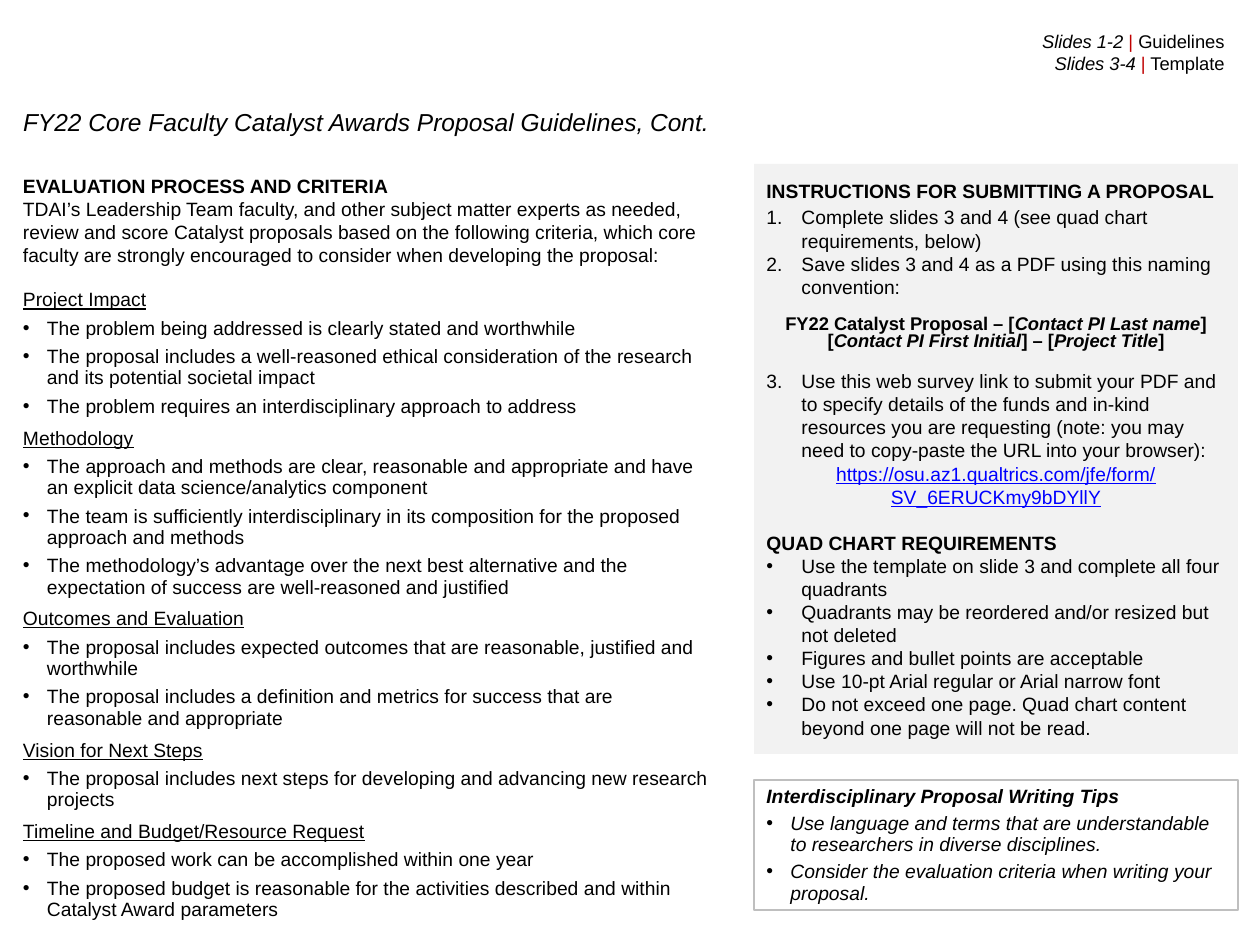
import pptx
import pptx.util
import pptx.dml.color
import pptx.enum.shapes
import pptx.enum.text
from lxml import etree
from pptx.oxml.ns import qn

# Content: (kind, text) or (kind, [(run, marks), ...]); marks: b, i, u, link, red
TITLE = "FY22 Core Faculty Catalyst Awards Proposal Guidelines, Cont."
TAGS = [
    ("tag", [("Slides 1-2 ", "i"), ("|", "red"), (" Guidelines", "")]),
    ("tag", [("Slides 3-4 ", "i"), ("|", "red"), (" Template", "")]),
]
INTRO = [
    ("head", "EVALUATION PROCESS AND CRITERIA"),
    ("intro", "TDAI’s Leadership Team faculty, and other subject matter experts as needed, "
              "review and score Catalyst proposals based on the following criteria, which core "
              "faculty are strongly encouraged to consider when developing the proposal:"),
]
CRITERIA = {
    "Project Impact": [
        "The problem being addressed is clearly stated and worthwhile",
        "The proposal includes a well-reasoned ethical consideration of the research "
        "and its potential societal impact",
        "The problem requires an interdisciplinary approach to address"],
    "Methodology": [
        "The approach and methods are clear, reasonable and appropriate and have "
        "an explicit data science/analytics component",
        "The team is sufficiently interdisciplinary in its composition for the proposed "
        "approach and methods",
        "The methodology’s advantage over the next best alternative and the "
        "expectation of success are well-reasoned and justified"],
    "Outcomes and Evaluation": [
        "The proposal includes expected outcomes that are reasonable, justified and worthwhile",
        "The proposal includes a definition and metrics for success that are reasonable "
        "and appropriate"],
    "Vision for Next Steps": [
        "The proposal includes next steps for developing and advancing new research projects"],
    "Timeline and Budget/Resource Request": [
        "The proposed work can be accomplished within one year",
        "The proposed budget is reasonable for the activities described and within "
        "Catalyst Award parameters"],
}
STEPS = [
    ("first", "INSTRUCTIONS FOR SUBMITTING A PROPOSAL"),
    ("step", "Complete slides 3 and 4 (see quad chart requirements, below)"),
    ("step", "Save slides 3 and 4 as a PDF using this naming convention:"),
    ("name", [("FY22 Catalyst Proposal – [", "b"), ("Contact PI Last name", "b i"),
              ("] [", "b"), ("Contact PI First Initial", "b i"), ("] – [", "b"),
              ("Project Title", "b i"), ("]", "b")]),
    ("step 3", "Use this web survey link to submit your PDF and to specify details of the funds "
               "and in-kind resources you are requesting (note: you may need to copy-paste "
               "the URL into your browser):"),
    ("url", "https://osu.az1.qualtrics.com/jfe/form/SV_6ERUCKmy9bDYllY"),
    ("quad", "QUAD CHART REQUIREMENTS"),
    ("rule", "Use the template on slide 3 and complete all four quadrants"),
    ("rule", "Quadrants may be reordered and/or resized but not deleted"),
    ("rule", "Figures and bullet points are acceptable"),
    ("rule", "Use 10-pt Arial regular or Arial narrow font"),
    ("rule", "Do not exceed one page. Quad chart content beyond one page will not be read."),
]
TIPS = [
    ("tip head", "Interdisciplinary Proposal Writing Tips"),
    ("tip", "Use language and terms that are understandable to researchers in diverse disciplines."),
    ("last tip", "Consider the evaluation criteria when writing your proposal."),
]

# Styles: spacing in pt, indent in px
COLORS = {"text": "000000", "red": "C00000", "link": "0000FF",
          "panel": "F2F2F2", "edge": "BFBFBF"}
FONT = "Arial"
STEP = dict(num=1, indent=35)
TIP = dict(bullet=True, indent=24, lead=12.4, marks="i")
KINDS = {
    "title": dict(size=14, marks="i", align="LEFT"),
    "tag": dict(size=10.5, align="RIGHT"),
    "head": dict(marks="b"),
    "intro": dict(after=11),
    "topic": dict(marks="u", lead=12.2, before=2, after=4),
    "point": dict(bullet=True, indent=24, lead=12.2, after=4),
    "first": dict(marks="b", after=2),
    "step": STEP,
    "step 3": {**STEP, "num": 3, "before": 10.2},
    "name": dict(size=10.5, align="CENTER", lead=10.2, before=10.2),
    "url": dict(marks="u link", align="CENTER"),
    "quad": dict(marks="b", before=13),
    "rule": dict(bullet=True, indent=35),
    "tip head": dict(marks="b i", lead=12.4, after=3),
    "tip": {**TIP, "after": 3},
    "last tip": TIP,
}
EMU = 914400 / 126


def px(n):
    return pptx.util.Emu(round(n * EMU))


def rgb(key):
    return pptx.dml.color.RGBColor.from_string(COLORS[key])


def style(para, kind, text):
    look = KINDS[kind]
    runs = [(text, look.get("marks", ""))] if isinstance(text, str) else text
    para.text = runs[0][0]
    for words, _ in runs[1:]:
        para.add_run().text = words
    para.space_before = pptx.util.Pt(look.get("before", 0))
    para.space_after = pptx.util.Pt(look.get("after", 0))
    para.alignment = getattr(pptx.enum.text.PP_ALIGN, look.get("align", "LEFT"))
    if "lead" in look:
        para.line_spacing = pptx.util.Pt(look["lead"])
    # Bullets and numbers
    if "indent" in look:
        props = para._p.get_or_add_pPr()
        props.set("marL", str(px(look["indent"])))
        props.set("indent", str(-px(look["indent"])))
        etree.SubElement(props, qn("a:buFont"), typeface=FONT)
        if "num" in look:
            etree.SubElement(props, qn("a:buAutoNum"), type="arabicPeriod",
                             startAt=str(look["num"]))
        else:
            etree.SubElement(props, qn("a:buChar"), char="•")
    for run, (_, marks) in zip(para.runs, runs):
        marks = marks.split()
        font = run.font
        font.name, font.size = FONT, pptx.util.Pt(look.get("size", 11))
        font.bold, font.italic, font.underline = "b" in marks, "i" in marks, "u" in marks
        font.color.rgb = rgb(next((m for m in marks if m in COLORS), "text"))


def write(shape, paras, anchor="TOP", **pads):
    frame = shape.text_frame
    frame.word_wrap = True
    frame.auto_size = pptx.enum.text.MSO_AUTO_SIZE.NONE
    frame.vertical_anchor = getattr(pptx.enum.text.MSO_ANCHOR, anchor)
    for side, pad in pads.items():
        setattr(frame, "margin_" + side, px(pad))
    for n, (kind, text) in enumerate(paras):
        style(frame.add_paragraph() if n else frame.paragraphs[0], kind, text)


def box(slide, *area):
    shape = slide.shapes.add_shape(pptx.enum.shapes.MSO_SHAPE.RECTANGLE, *map(px, area))
    shape.shadow.inherit = False
    shape.fill.background()
    shape.line.fill.background()
    return shape


def main():
    deck = pptx.Presentation()
    deck.slide_width, deck.slide_height = px(1260), px(945)
    slide = deck.slides.add_slide(deck.slide_layouts[5])

    # Title
    title = slide.shapes.title
    title.left, title.top, title.width, title.height = map(px, (23, 107, 751, 37))
    write(title, [("title", TITLE)], left=0, top=0, right=0)

    # Slide key at top right
    write(slide.shapes.add_textbox(*map(px, (552, 24, 685, 57))), TAGS)

    # Criteria on the left
    paras = list(INTRO)
    for topic, points in CRITERIA.items():
        paras.append(("topic", topic))
        paras += [("point", point) for point in points]
    write(slide.shapes.add_textbox(*map(px, (23, 168, 704, 777))), paras, left=0)

    # Instructions panel
    panel = box(slide, 754, 164, 484, 590)
    panel.fill.solid()
    panel.fill.fore_color.rgb = rgb("panel")
    write(panel, STEPS, "MIDDLE", top=13, bottom=13)

    # Writing tips
    tips = box(slide, 754, 780, 484, 130)
    tips.line.color.rgb = rgb("edge")
    tips.line.width = pptx.util.Pt(0.75)
    write(tips, TIPS, "MIDDLE")

    deck.save("out.pptx")


if __name__ == "__main__":
    main()
